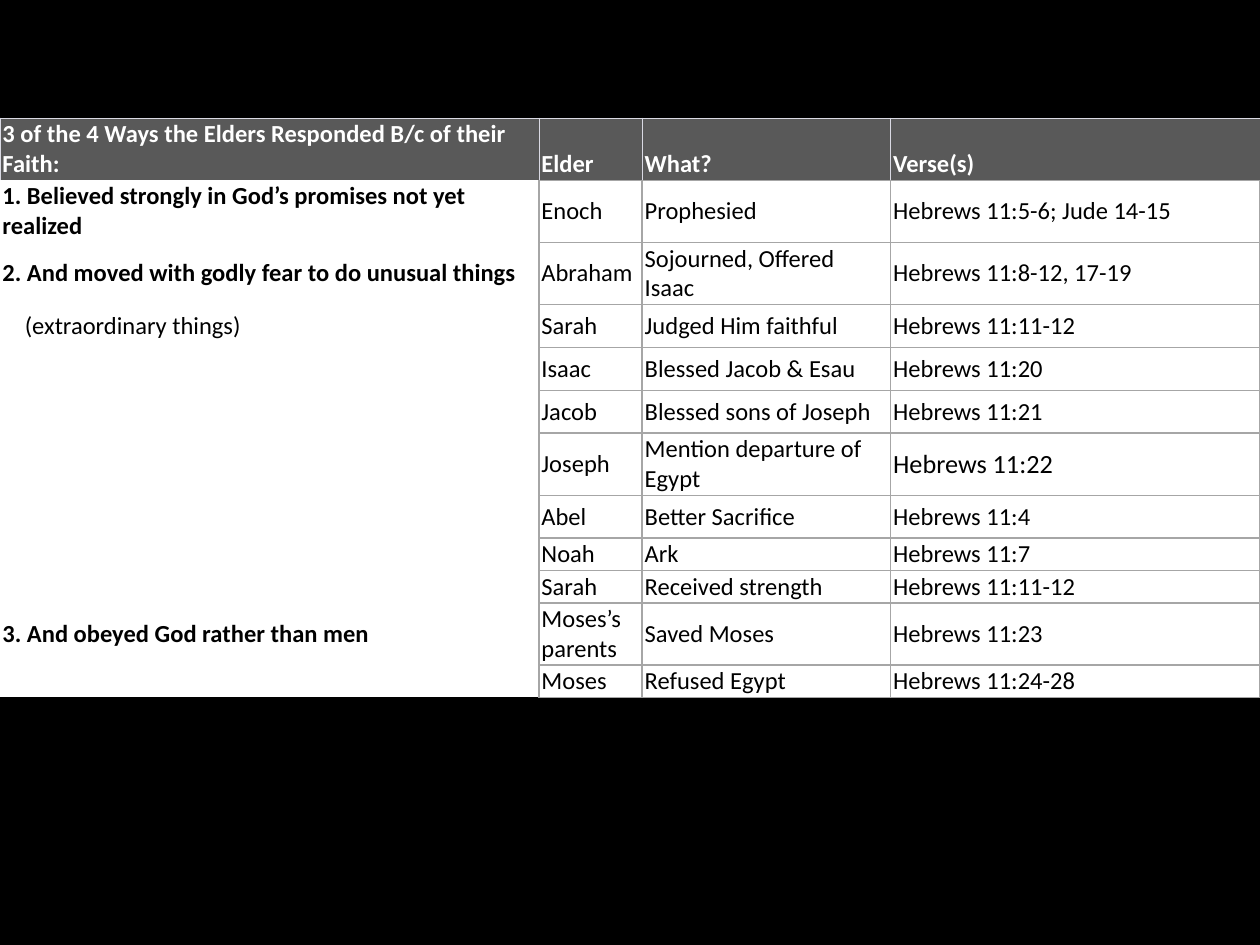
from lxml import etree
from pptx import Presentation
from pptx.dml.color import RGBColor
from pptx.enum.text import MSO_ANCHOR
from pptx.oxml.ns import qn
from pptx.util import Pt

BOTTOM, MIDDLE = MSO_ANCHOR.BOTTOM, MSO_ANCHOR.MIDDLE

COLORS = {"background": "000000", "header": "595959", "body": "FFFFFF",
          "header_text": "FFFFFF", "body_text": "000000",
          "grid": "A6A6A6", "header_grid": "D9D9E3"}

FONT, TEXT_SIZE, LARGE_SIZE = "Calibri", 14, 15
MARGINS = {"margin_left": 1.44, "margin_right": 1.44,
           "margin_top": 0.72, "margin_bottom": 0.72}
SUBITEM_INDENT = 14.2

TABLE_TOP = 67.5
COL_WIDTHS = [308, 59, 142, 211]
ROW_HEIGHTS = [34] + [24.5] * 5 + [34, 24.5, 18, 18, 34, 18.5]

SUBITEM = "(extraordinary things)"
LARGE_VERSE = "Hebrews 11:22"
ROWS = [
    ("3 of the 4 Ways the Elders Responded B/c of their Faith:", "Elder", "What?", "Verse(s)"),
    ("1. Believed strongly in God’s promises not yet realized",
     "Enoch", "Prophesied", "Hebrews 11:5-6; Jude 14-15"),
    ("2. And moved with godly fear to do unusual things",
     "Abraham", "Sojourned, Offered Isaac", "Hebrews 11:8-12, 17-19"),
    (SUBITEM, "Sarah", "Judged Him faithful", "Hebrews 11:11-12"),
    ("", "Isaac", "Blessed Jacob & Esau", "Hebrews 11:20"),
    ("", "Jacob", "Blessed sons of Joseph", "Hebrews 11:21"),
    ("", "Joseph", "Mention departure of Egypt", LARGE_VERSE),
    ("", "Abel", "Better Sacrifice", "Hebrews 11:4"),
    ("", "Noah", "Ark", "Hebrews 11:7"),
    ("", "Sarah", "Received strength", "Hebrews 11:11-12"),
    ("3. And obeyed God rather than men", "Moses’s parents", "Saved Moses", "Hebrews 11:23"),
    ("", "Moses", "Refused Egypt", "Hebrews 11:24-28"),
]


def rgb(name):
    return RGBColor.from_string(COLORS[name])


def set_borders(cell, borders):
    """Draw the sides in borders, {side: (colour name, points)}, and clear the rest."""
    tcPr = cell._tc.get_or_add_tcPr()
    for side in "LRTB":
        ln = etree.SubElement(tcPr, qn(f"a:ln{side}"))
        if side in borders:
            color, width = borders[side]
            ln.set("w", str(Pt(width)))
            fill = etree.SubElement(ln, qn("a:solidFill"))
            etree.SubElement(fill, qn("a:srgbClr"), val=COLORS[color])
        else:
            etree.SubElement(ln, qn("a:noFill"))


def cell_borders(row, col):
    if row == 0:
        borders = dict.fromkeys("LTR", ("header_grid", 0.5))
        if col > 0:
            borders["B"] = ("grid", 1)
        return borders
    return dict.fromkeys("R" if col == 0 else "LRTB", ("grid", 1))


def set_text(cell, text, size, bold, color):
    p = cell.text_frame.paragraphs[0]
    if not text:
        # An empty cell keeps the text size, so that it does not stretch its row.
        etree.SubElement(p._p, qn("a:endParaRPr"), sz=str(size * 100))
        return
    r = p.add_run()
    r.text = text
    for name, value in {"name": FONT, "size": Pt(size), "bold": bold}.items():
        setattr(r.font, name, value)
    r.font.color.rgb = rgb(color)


def format_cell(cell, row, col, text):
    header = row == 0
    set_borders(cell, cell_borders(row, col))
    cell.fill.solid()
    cell.fill.fore_color.rgb = rgb("header" if header else "body")
    cell.vertical_anchor = BOTTOM if header else MIDDLE
    for name, value in MARGINS.items():
        setattr(cell, name, Pt(value))
    if text == SUBITEM:
        cell.margin_left = Pt(SUBITEM_INDENT)
    set_text(cell, text,
             size=LARGE_SIZE if text == LARGE_VERSE else TEXT_SIZE,
             bold=header or (col == 0 and text != SUBITEM),
             color="header_text" if header else "body_text")


def add_elders_table(s):
    table = s.shapes.add_table(len(ROWS), len(COL_WIDTHS), Pt(0), Pt(TABLE_TOP),
                               Pt(sum(COL_WIDTHS)), Pt(sum(ROW_HEIGHTS))).table
    table.first_row = table.horz_banding = False
    for column, width in zip(table.columns, COL_WIDTHS):
        column.width = Pt(width)
    for i, (height, texts) in enumerate(zip(ROW_HEIGHTS, ROWS)):
        table.rows[i].height = Pt(height)
        for j, text in enumerate(texts):
            format_cell(table.cell(i, j), i, j, text)


def main():
    prs = Presentation()
    prs.slide_width, prs.slide_height = Pt(720), Pt(540)
    s = prs.slides.add_slide(prs.slide_layouts[6])
    s.background.fill.solid()
    s.background.fill.fore_color.rgb = rgb("background")
    add_elders_table(s)
    prs.save("out.pptx")


if __name__ == "__main__":
    main()
